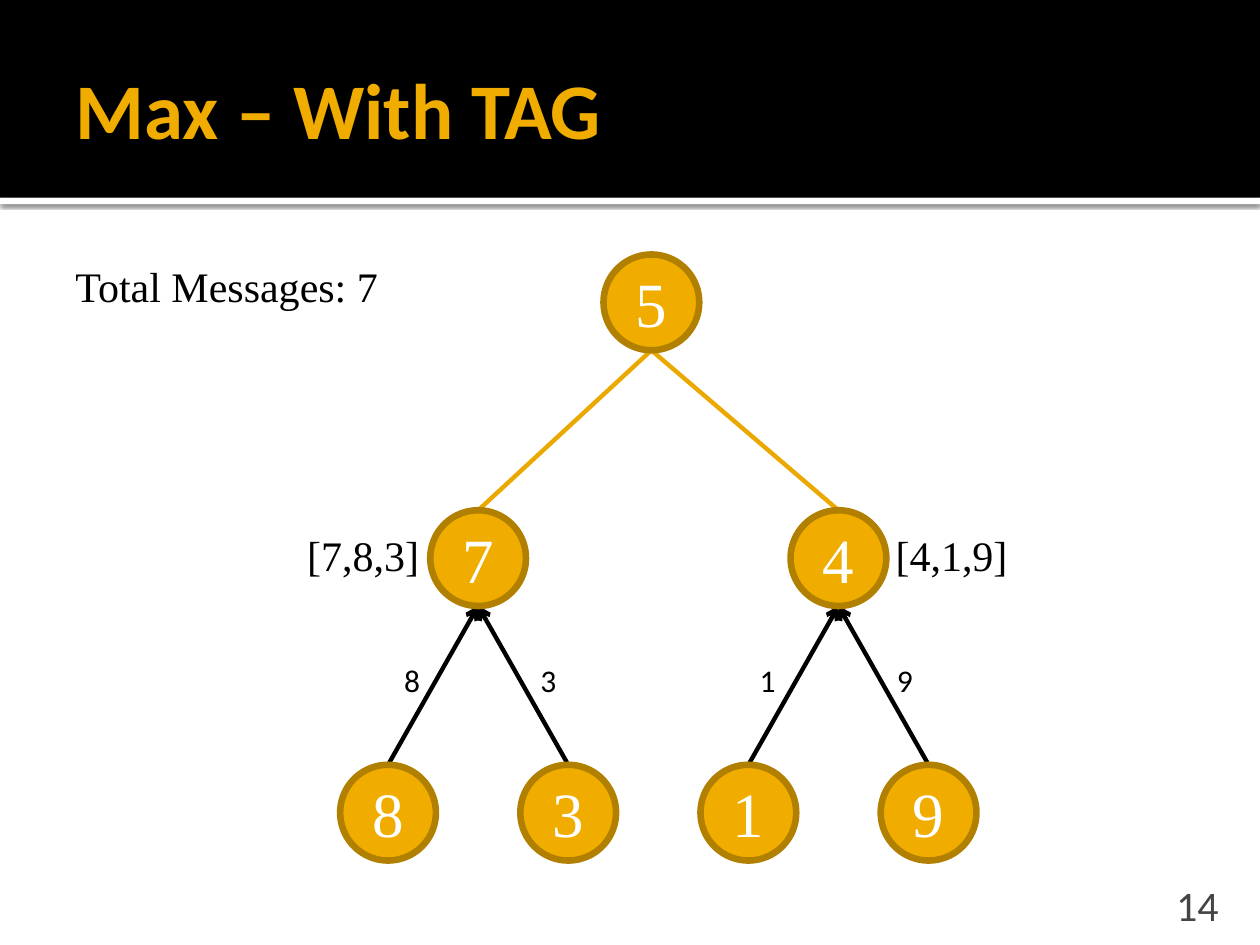
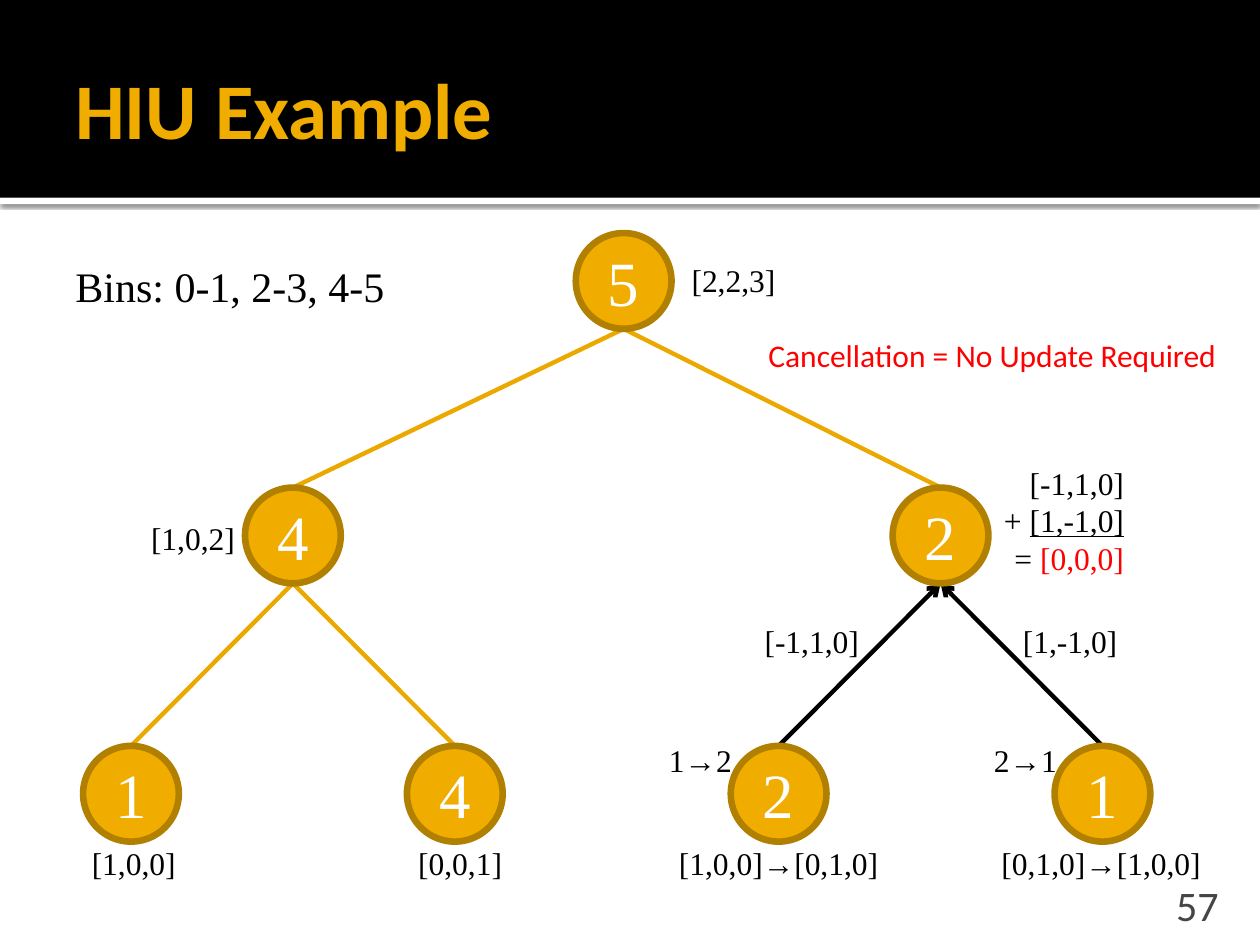
from lxml import etree
from pptx import Presentation
from pptx.dml.color import RGBColor
from pptx.enum.shapes import MSO_CONNECTOR, MSO_SHAPE
from pptx.enum.text import MSO_ANCHOR, MSO_AUTO_SIZE, PP_ALIGN
from pptx.oxml.ns import qn
from pptx.util import Inches, Pt

RECTANGLE, OVAL = MSO_SHAPE.RECTANGLE, MSO_SHAPE.OVAL
STRAIGHT = MSO_CONNECTOR.STRAIGHT
LEFT, CENTER, RIGHT = PP_ALIGN.LEFT, PP_ALIGN.CENTER, PP_ALIGN.RIGHT
TOP, MIDDLE, BOTTOM = MSO_ANCHOR.TOP, MSO_ANCHOR.MIDDLE, MSO_ANCHOR.BOTTOM

COLORS = {
    "band": "000000", "rule": "FFFFFF", "title": "F0AD00", "number": "454545",
    "node": "F0AD00", "node_edge": "B28000", "node_text": "FFFFFF",
    "link": "EBA900", "message": "000000", "text": "000000", "alert": "FF0000",
}
SANS, SERIF = "Calibri", "Times New Roman"
NODE_SIZE = 0.76
LABEL_HEIGHTS = {18: 0.4, 24: 0.5}


def rgb(role):
    return RGBColor.from_string(COLORS[role])


def style(paragraph, size, font, color, align=LEFT, bold=False):
    paragraph.alignment = align
    paragraph.font.size = Pt(size)
    paragraph.font.name = font
    paragraph.font.bold = bold
    paragraph.font.color.rgb = rgb(color)


def add_bar(slide, top, height, color):
    bar = slide.shapes.add_shape(RECTANGLE, 0, Inches(top), Inches(10), Inches(height))
    bar.shadow.inherit = False
    bar.fill.solid()
    bar.fill.fore_color.rgb = rgb(color)
    bar.line.fill.background()
    return bar


def add_soft_shadow(shape):
    effects = shape._element.spPr.find(qn("a:effectLst"))
    shadow = etree.SubElement(effects, qn("a:outerShdw"), blurRad=str(Pt(2.5)),
                              dist=str(Pt(0.8)), dir="5400000", algn="t")
    black = etree.SubElement(shadow, qn("a:srgbClr"), val=COLORS["band"])
    etree.SubElement(black, qn("a:alpha"), val="60000")


def add_text_frame(slide, left, top, width, height, anchor=TOP):
    box = slide.shapes.add_textbox(*map(Inches, (left, top, width, height)))
    box.text_frame.vertical_anchor = anchor
    return box.text_frame


def add_framed_slide(deck, title, number):
    """Add a slide with the title band, its rule and the slide number."""
    slide = deck.slides.add_slide(deck.slide_layouts[6])
    add_soft_shadow(add_bar(slide, 1.57, 0.05, "rule"))
    add_bar(slide, 0, 1.57, "band")

    heading = add_text_frame(slide, 0.5, 0.17, 9, 1.37, MIDDLE)
    heading.word_wrap = True
    heading.margin_right = Inches(0.05)
    heading.text = title
    style(heading.paragraphs[0], 45, SANS, "title", bold=True)

    footer = add_text_frame(slide, 8.97, 7.08, 0.8, 0.3, BOTTOM)
    footer.word_wrap = True
    footer.margin_bottom = 0
    footer.text = str(number)
    style(footer.paragraphs[0], 24, SANS, "number", RIGHT)
    return slide


def add_label(slide, text, left, top, width, size=18, font=SERIF, color="text"):
    frame = add_text_frame(slide, left, top, width, LABEL_HEIGHTS[size])
    frame.word_wrap = False
    frame.auto_size = MSO_AUTO_SIZE.SHAPE_TO_FIT_TEXT
    frame.text = text
    style(frame.paragraphs[0], size, font, color)


def add_edge(slide, start, end, sends_message=False):
    edge = slide.shapes.add_connector(STRAIGHT, *map(Inches, (*start, *end)))
    edge.line.width = Pt(2.5)
    edge.line.color.rgb = rgb("message" if sends_message else "link")
    if sends_message:
        etree.SubElement(edge.line._get_or_add_ln(), qn("a:tailEnd"), type="arrow")
    etree.SubElement(edge._element.spPr, qn("a:effectLst"))


def add_node(slide, value, center_x, top):
    node = slide.shapes.add_shape(OVAL, Inches(center_x - NODE_SIZE / 2), Inches(top),
                                  Inches(NODE_SIZE), Inches(NODE_SIZE))
    node.shadow.inherit = False
    node.fill.solid()
    node.fill.fore_color.rgb = rgb("node")
    node.line.color.rgb = rgb("node_edge")
    node.line.width = Pt(3.78)
    node.text_frame.vertical_anchor = MIDDLE
    node.text_frame.text = str(value)
    style(node.text_frame.paragraphs[0], 36, SERIF, "node_text", CENTER)


def add_tree(slide, values, root_x, level_tops, first_leaf_x, leaf_gap, senders):
    """Draw a binary tree of seven values in level order; senders are leaf indexes."""
    root_top, parent_top, leaf_top = level_tops
    leaves = [first_leaf_x + i * leaf_gap for i in range(4)]
    parents = [(leaves[i] + leaves[i + 1]) / 2 for i in (0, 2)]

    for x in parents:
        add_edge(slide, (root_x, root_top + NODE_SIZE), (x, parent_top))
    for i, x in enumerate(leaves):
        parent_bottom = (parents[i // 2], parent_top + NODE_SIZE)
        add_edge(slide, (x, leaf_top), parent_bottom, i in senders)

    places = [(root_x, root_top)]
    places += [(x, parent_top) for x in parents]
    places += [(x, leaf_top) for x in leaves]
    for value, (x, top) in zip(values, places):
        add_node(slide, value, x, top)


def add_update_sum(slide):
    frame = add_text_frame(slide, 7.81, 3.63, 1.21, 1.01)
    frame.word_wrap = False
    frame.auto_size = MSO_AUTO_SIZE.SHAPE_TO_FIT_TEXT
    rows = [("", "[-1,1,0]"), ("+ ", "[1,-1,0]"), ("= ", "[0,0,0]")]
    for i, (sign, vector) in enumerate(rows):
        row = frame.add_paragraph() if i else frame.paragraphs[0]
        if sign:
            row.add_run().text = sign
        term = row.add_run()
        term.text = vector
        style(row, 18, SERIF, "text", RIGHT)
        if sign == "+ ":
            term.font.underline = True
        elif sign == "= ":
            term.font.color.rgb = rgb("alert")


def build_max_with_tag(deck):
    slide = add_framed_slide(deck, "Max – With TAG", 14)
    add_tree(slide, (5, 7, 4, 8, 3, 1, 9), 5.17, (2.02, 4.05, 6.07),
             3.08, 1.43, senders=range(4))
    add_label(slide, "Total Messages: 7", 0.5, 2.02, 2.63, 24)
    for collected, left in (("[7,8,3]", 2.34), ("[4,1,9]", 7.01)):
        add_label(slide, collected, left, 4.15, 1.1, 24)
    for message, left in (("8", 3.11), ("3", 4.19), ("1", 5.93), ("9", 7.02)):
        add_label(slide, message, left, 5.2, 0.33, font=SANS)


def build_hiu_example(deck):
    slide = add_framed_slide(deck, "HIU Example", 57)
    add_tree(slide, (5, 4, 2, 1, 4, 2, 1), 4.95, (1.85, 3.87, 5.92),
             1.04, 2.57, senders=(2, 3))
    add_label(slide, "Bins: 0-1, 2-3, 4-5", 0.5, 2.02, 2.68, 24)
    add_label(slide, "Cancellation = No Update Required", 6, 2.62, 3.85,
              font=SANS, color="alert")
    histograms = [
        ("[2,2,3]", 5.39, 2.02, 0.88),
        ("[1,0,2]", 1.1, 4.07, 0.88),
        ("[-1,1,0]", 5.97, 4.89, 0.96),
        ("[1,-1,0]", 8.02, 4.89, 0.96),
        ("1→2", 5.21, 5.83, 0.7),
        ("2→1", 7.79, 5.83, 0.7),
        ("[1,0,0]", 0.63, 6.65, 0.88),
        ("[0,0,1]", 3.22, 6.65, 0.88),
        ("[1,0,0]→[0,1,0]", 5.29, 6.65, 1.8),
        ("[0,1,0]→[1,0,0]", 7.85, 6.65, 1.8),
    ]
    for histogram in histograms:
        add_label(slide, *histogram)
    add_update_sum(slide)


def main():
    deck = Presentation()
    deck.slide_width, deck.slide_height = Inches(10), Inches(7.5)
    build_max_with_tag(deck)
    build_hiu_example(deck)
    deck.save("out.pptx")


if __name__ == "__main__":
    main()
